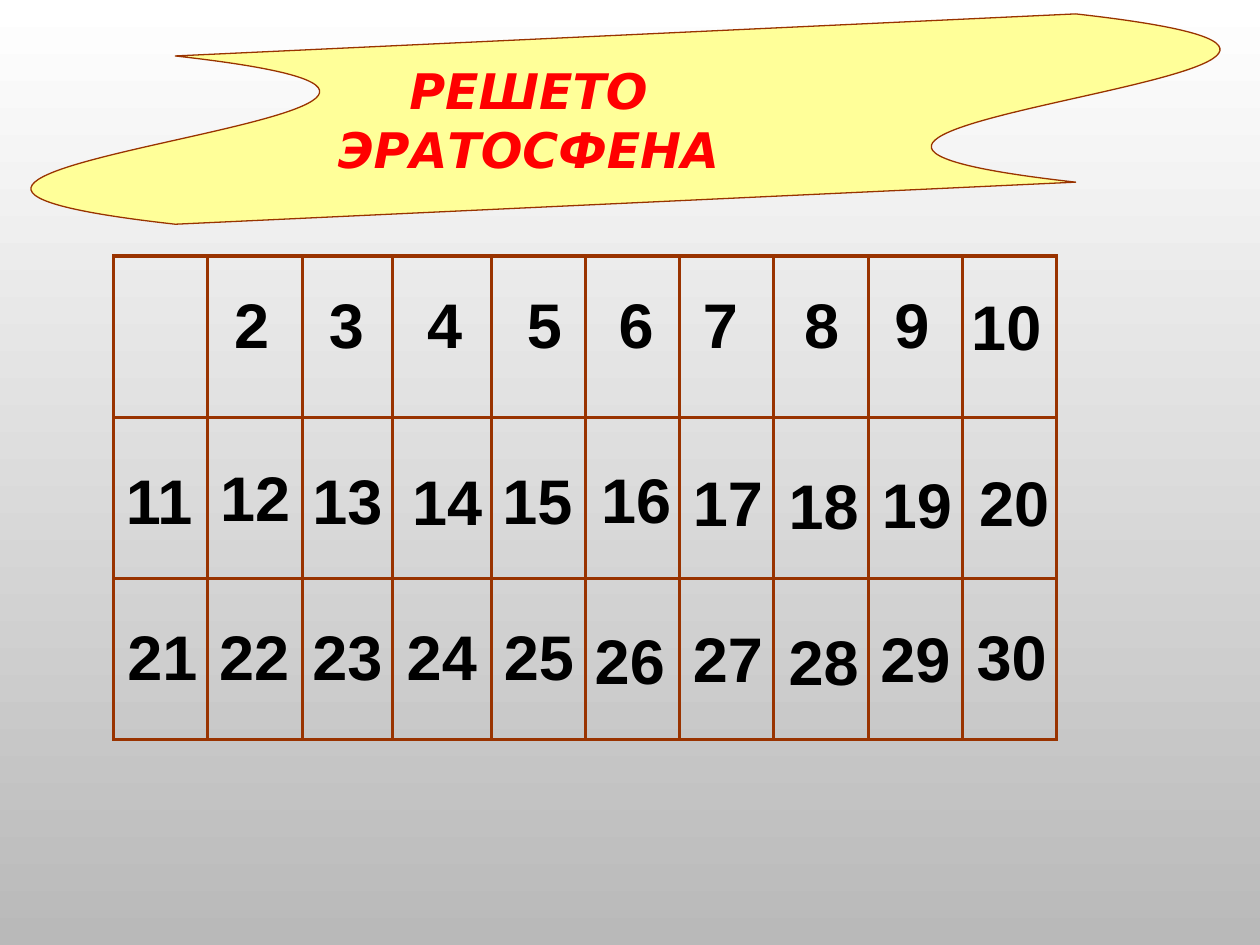
from lxml import etree
from pptx import Presentation
from pptx.dml.color import RGBColor
from pptx.enum.shapes import MSO_SHAPE as Shape
from pptx.enum.text import MSO_ANCHOR as Anchor, MSO_AUTO_SIZE as AutoSize, PP_ALIGN as Align
from pptx.oxml import parse_xml
from pptx.oxml.ns import nsdecls, qn
from pptx.util import Cm, Pt

WHITE = RGBColor(0xFF, 0xFF, 0xFF)
GREY = RGBColor(0xB9, 0xB9, 0xB9)
BROWN = RGBColor(0x99, 0x33, 0x00)
YELLOW = RGBColor(0xFF, 0xFF, 0x99)
RED = RGBColor(0xFF, 0x00, 0x00)
BLACK = RGBColor(0x00, 0x00, 0x00)

COLUMN_WIDTHS = [1.9, 1.9, 1.83, 1.98] + [1.9] * 6
ROW_COUNT = 3

# Offsets of the numbers from the grid corner in cm, row by row: (left, top)
NUMBER_OFFSETS = [
    (2.18, 0.48), (4.09, 0.48), (6.07, 0.48), (8.08, 0.48), (9.93, 0.48),
    (11.63, 0.48), (13.67, 0.48), (15.49, 0.48), (17.04, 0.51),
    (0, 4.01), (1.9, 3.96), (3.76, 4.01), (5.77, 4.04), (7.59, 4.01),
    (9.58, 3.99), (11.43, 4.06), (13.36, 4.11), (15.24, 4.09), (17.2, 4.06),
    (0.03, 7.16), (1.88, 7.16), (3.76, 7.16), (5.66, 7.16), (7.62, 7.16),
    (9.45, 7.24), (11.43, 7.21), (13.36, 7.26), (15.21, 7.21), (17.15, 7.16),
]


def add_span(para, text, size, font, color, italic=None):
    span = para.add_run()
    span.text = text
    span.font.size = Pt(size)
    span.font.name = font
    span.font.bold = True
    span.font.italic = italic
    span.font.color.rgb = color


def set_background(page):
    fill = page.background.fill
    fill.gradient()
    fill.gradient_angle = 270
    for stop, color, position in zip(fill.gradient_stops, (WHITE, GREY), (0, 1)):
        stop.color.rgb = color
        stop.position = position


def set_borders(cell):
    properties = cell._tc.get_or_add_tcPr()
    for index, side in enumerate(("lnL", "lnR", "lnT", "lnB")):
        properties.insert(index, parse_xml(
            f'<a:{side} {nsdecls("a")} w="{Pt(2)}"><a:solidFill>'
            f'<a:srgbClr val="{BROWN}"/></a:solidFill></a:{side}>'))


def add_grid(page, left, top, width, height):
    table = page.shapes.add_table(
        ROW_COUNT, len(COLUMN_WIDTHS), Cm(left), Cm(top), Cm(width), Cm(height)).table
    table.first_row = table.horz_banding = False
    for column, column_width in zip(table.columns, COLUMN_WIDTHS):
        column.width = Cm(column_width)
    for row in table.rows:
        row.height = Cm(height / ROW_COUNT)
    for cell in table.iter_cells():
        cell.fill.background()
        set_borders(cell)


def add_numbers(page, left, top):
    for number, (across, down) in enumerate(NUMBER_OFFSETS, start=2):
        width = 1.22 if number < 10 else 1.93
        box = page.shapes.add_textbox(Cm(left + across), Cm(top + down), Cm(width), Cm(1.8))
        frame = box.text_frame
        frame.word_wrap = False
        frame.auto_size = AutoSize.SHAPE_TO_FIT_TEXT
        add_span(frame.paragraphs[0], str(number), 36, "Arial", BLACK)


def add_banner(page, left, top, width, height):
    # The wave stands upright and is turned on its side about its centre
    shift = (width - height) / 2
    banner = page.shapes.add_shape(
        Shape.WAVE, Cm(left + shift), Cm(top - shift), Cm(height), Cm(width))
    banner.rotation = 270
    banner.adjustments[0] = 0.125
    banner.adjustments[1] = 0.1
    banner.shadow.inherit = False
    banner.fill.solid()
    banner.fill.fore_color.rgb = YELLOW
    banner.line.color.rgb = BROWN
    banner.line.width = Pt(0.75)
    frame = banner.text_frame
    frame.word_wrap = True
    frame.vertical_anchor = Anchor.MIDDLE
    frame._txBody.find(qn("a:bodyPr")).set("vert", "eaVert")
    para = frame.paragraphs[0]
    para.alignment = Align.CENTER
    add_span(para, "РЕШЕТО ЭРАТОСФЕНА", 28, "DejaVu Sans", RED, italic=True)


def main():
    deck = Presentation()
    deck.slide_width, deck.slide_height = Cm(25.4), Cm(19.05)
    page = deck.slides.add_slide(deck.slide_layouts[6])
    set_background(page)
    add_grid(page, 2.29, 5.16, 19.05, 9.75)
    add_numbers(page, 2.29, 5.16)
    add_banner(page, 0.51, 0.28, 24.2, 4.24)
    deck.save("out.pptx")


if __name__ == "__main__":
    main()
